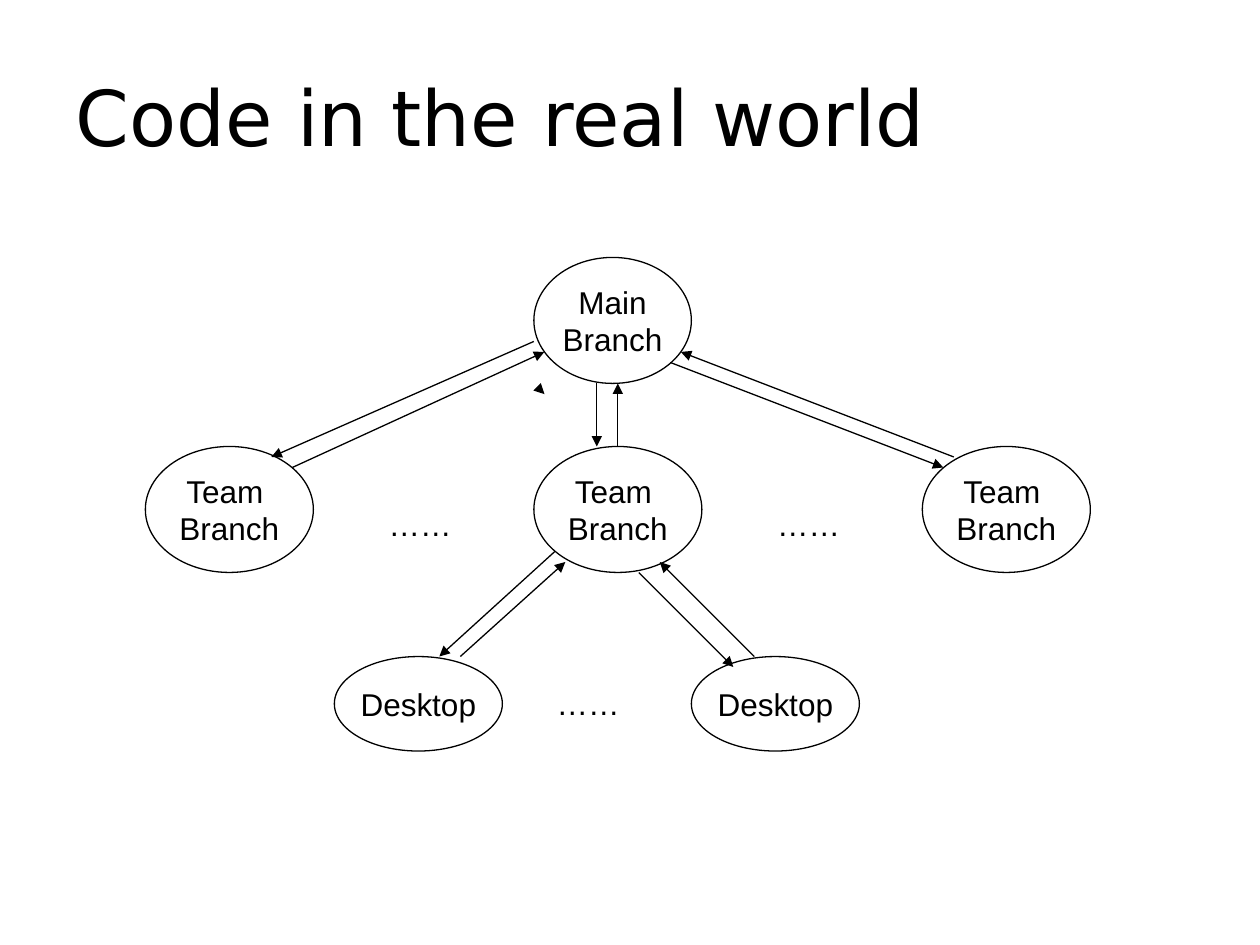
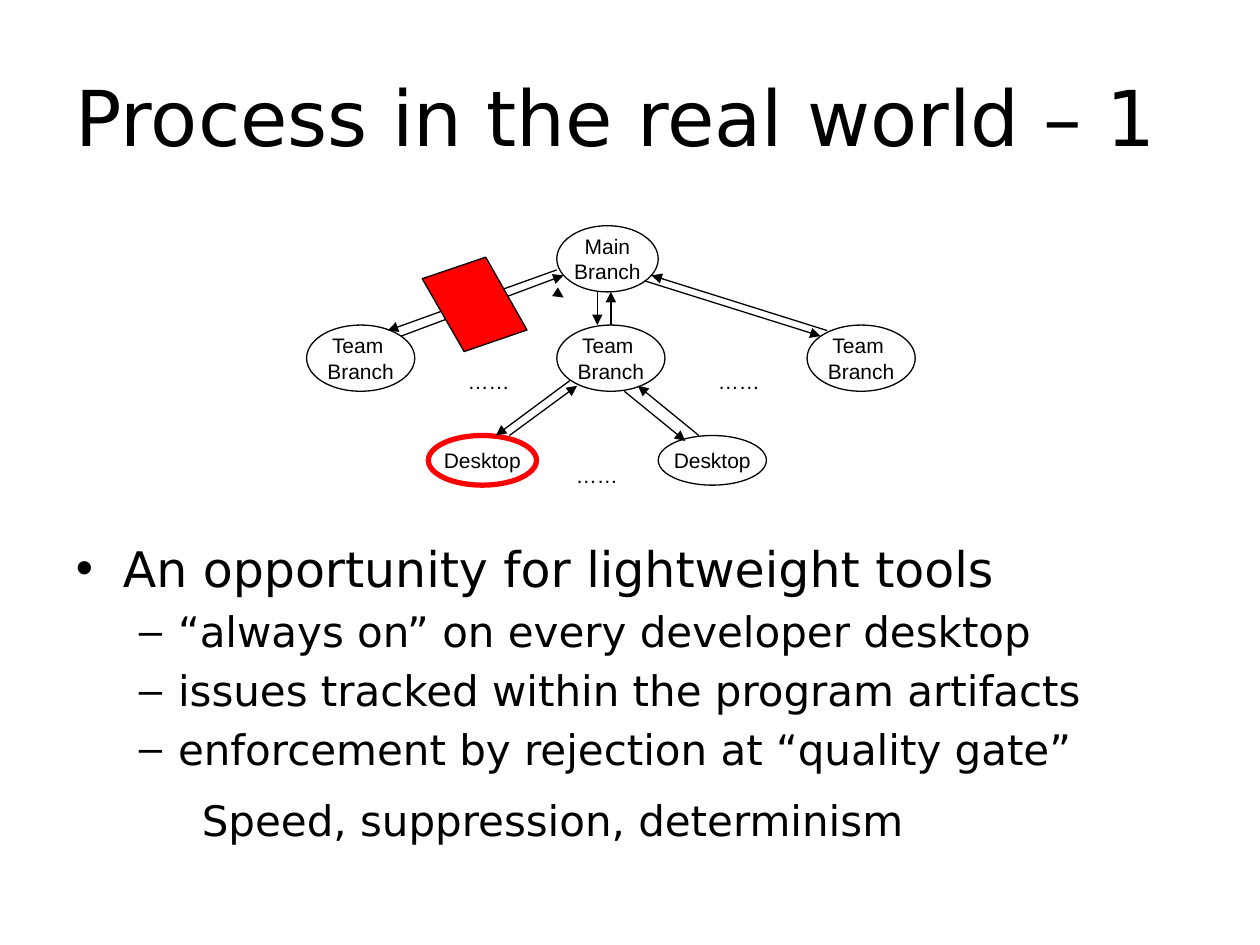
from collections import namedtuple
from dataclasses import dataclass

from lxml.etree import SubElement as Sub
from pptx import Presentation
from pptx.dml.color import RGBColor as RGB
from pptx.enum.shapes import MSO_CONNECTOR as Line, MSO_SHAPE as Shape
from pptx.enum.text import MSO_ANCHOR as Anchor, MSO_AUTO_SIZE as Fit, PP_ALIGN as Align
from pptx.oxml.ns import qn
from pptx.util import Cm, Pt


@dataclass(frozen=True)
class Theme:
    """Colours, fonts and sizes that the slides share."""
    ink: RGB = RGB(0, 0, 0)
    paper: RGB = RGB(255, 255, 255)
    alert: RGB = RGB(255, 0, 0)
    heading: str = "DejaVu Sans"
    label: str = "Arial"
    title: int = 44
    levels: tuple = (28, 24, 24)
    thin: float = 0.75
    thick: float = 3


T = Theme()
Box = namedtuple("Box", "x y w h")
Level = namedtuple("Level", "margin indent bullet spacing")

TITLE = Box(1.28, 0.75, 22.86, 3.18)
BODY = Box(1.28, 10.73, 22.86, 6.63)
LEVELS = (Level(0.95, -0.95, "•", None), Level(2.06, -0.79, "–", None),
          Level(3.18, -0.64, None, 1.25))

COLUMNS, ROWS = 90, 47
TEAM = ("Team ", "Branch")
NODES = ((37, 0, 15, 12, ("Main", "Branch")),
         *((x, 18, 16, 12, TEAM) for x in (0, 37, 74)),
         *((x, 38, 16, 9, ("Desktop",)) for x in (18, 52)))
FIRST_DESKTOP = 4
ARROWS = ((38, 13, 38.02, 13.02),
          (37, 8, 12, 19), (14, 20, 38, 9),
          (43, 12, 43, 18), (45, 18, 45, 12),
          (50, 10, 76, 20), (77, 19, 51, 9),
          (39, 28, 28, 38), (30, 38, 40, 29),
          (47, 30, 56, 39), (58, 38, 49, 29))
DOTS = ((22, 23), (59, 23), (38, 40))
GATE = ((17.1, 9.6), (23.3, 22.8), (32.6, 18.9), (26.5, 5.7))


def apply(obj, **values):
    """Set every given attribute on an object."""
    for name, value in values.items():
        setattr(obj, name, value)


def write(p, text, size, font):
    """Add a run in the ink colour to a paragraph."""
    r = p.add_run()
    r.text = text
    apply(r.font, size=Pt(size), name=font)
    r.font.color.rgb = T.ink


def text_box(s, box, **frame):
    """Add a text box and return its text frame."""
    tf = s.shapes.add_textbox(*map(Cm, box)).text_frame
    apply(tf, **frame)
    return tf


def paint(sp, fill, line=T.ink, width=T.thin):
    """Give a shape a flat fill and an outline."""
    sp.shadow.inherit = False
    sp.fill.solid()
    sp.fill.fore_color.rgb = fill
    sp.line.color.rgb = line
    sp.line.width = Pt(width)


def place(box, x, y):
    """Turn a grid point into slide lengths within the box."""
    return Cm(box.x + x * box.w / COLUMNS), Cm(box.y + y * box.h / ROWS)


def add_title(s, box, text):
    """Write the slide title."""
    tf = text_box(s, box, word_wrap=True, vertical_anchor=Anchor.MIDDLE)
    write(tf.paragraphs[0], text, T.title, T.heading)


def add_node(s, box, node, size, **outline):
    """Draw one labelled branch or desktop."""
    x, y, w, h, lines = node
    left, top = place(box, x, y)
    right, bottom = place(box, x + w, y + h)
    sp = s.shapes.add_shape(Shape.OVAL, left, top, right - left, bottom - top)
    paint(sp, T.paper, **outline)
    tf = sp.text_frame
    apply(tf, word_wrap=False, vertical_anchor=Anchor.MIDDLE)
    for i, text in enumerate(lines):
        p = tf.add_paragraph() if i else tf.paragraphs[0]
        p.alignment = Align.CENTER
        write(p, text, size, T.label)


def add_arrow(s, box, arrow):
    """Draw one arrow between two grid points."""
    x1, y1, x2, y2 = arrow
    c = s.shapes.add_connector(Line.STRAIGHT, *place(box, x1, y1), *place(box, x2, y2))
    c.line.color.rgb = T.ink
    c.line.width = Pt(T.thin)
    Sub(c.line._get_or_add_ln(), qn("a:tailEnd"), type="triangle")
    Sub(c._element.spPr, qn("a:effectLst"))


def add_dots(s, box, x, y, size):
    """Write an ellipsis in a box that fits its type size."""
    left, top = place(box, x, y)
    spot = Box(left.cm, top.cm, 0.56 + 0.07 * size, 0.25 + 0.04 * size)
    tf = text_box(s, spot, word_wrap=False, auto_size=Fit.SHAPE_TO_FIT_TEXT)
    write(tf.paragraphs[0], "……", size, T.label)


def add_gate(s, box):
    """Draw the quality gate across the left branch."""
    start, *rest = [place(box, x, y) for x, y in GATE]
    fb = s.shapes.build_freeform(*start)
    fb.add_line_segments(rest, close=True)
    paint(fb.convert_to_shape(), T.alert)


def add_tree(s, box, size, marked=None, drop=0):
    """Draw the branch tree, with one node marked if asked."""
    for i, node in enumerate(NODES):
        outline = {"line": T.alert, "width": T.thick} if i == marked else {}
        add_node(s, box, node, size, **outline)
    for arrow in ARROWS:
        add_arrow(s, box, arrow)
    for x, y in DOTS:
        add_dots(s, box, x, y + drop, size)


def add_body(s, box, items):
    """Write the outline of (level, text) items."""
    tf = text_box(s, box, word_wrap=True)
    for i, (depth, text) in enumerate(items):
        p = tf.add_paragraph() if i else tf.paragraphs[0]
        level = LEVELS[depth]
        apply(p, level=depth, line_spacing=level.spacing)
        pPr = p._p.get_or_add_pPr()
        pPr.set("marL", str(Cm(level.margin)))
        pPr.set("indent", str(Cm(level.indent)))
        Sub(Sub(pPr, qn("a:spcBef")), qn("a:spcPct"), val="20000")
        if level.bullet:
            Sub(pPr, qn("a:buFont"), typeface=T.label)
            Sub(pPr, qn("a:buChar"), char=level.bullet)
        else:
            Sub(pPr, qn("a:buNone"))
        write(p, text, T.levels[depth], T.heading)


def code_slide(s):
    """Build the slide about code."""
    add_title(s, TITLE, "Code in the real world")
    add_tree(s, Box(2.93, 5.19, 19.05, 9.95), 18)


def process_slide(s):
    """Build the slide about process."""
    add_title(s, TITLE, "Process in the real world – 1")
    add_body(s, BODY, (
        (0, "An opportunity for lightweight tools"),
        (1, "“always on” on every developer desktop"),
        (1, "issues tracked within the program artifacts"),
        (1, "enforcement by rejection at “quality gate”"),
        (2, "Speed, suppression, determinism")))
    box = Box(6.18, 4.55, 12.27, 5.23)
    add_tree(s, box, 12, marked=FIRST_DESKTOP, drop=1.8)
    add_gate(s, box)


def main():
    """Build and save the presentation."""
    prs = Presentation()
    apply(prs, slide_width=Cm(25.4), slide_height=Cm(19.05))
    for build in (code_slide, process_slide):
        build(prs.slides.add_slide(prs.slide_layouts[6]))
    prs.save("out.pptx")


if __name__ == "__main__":
    main()
